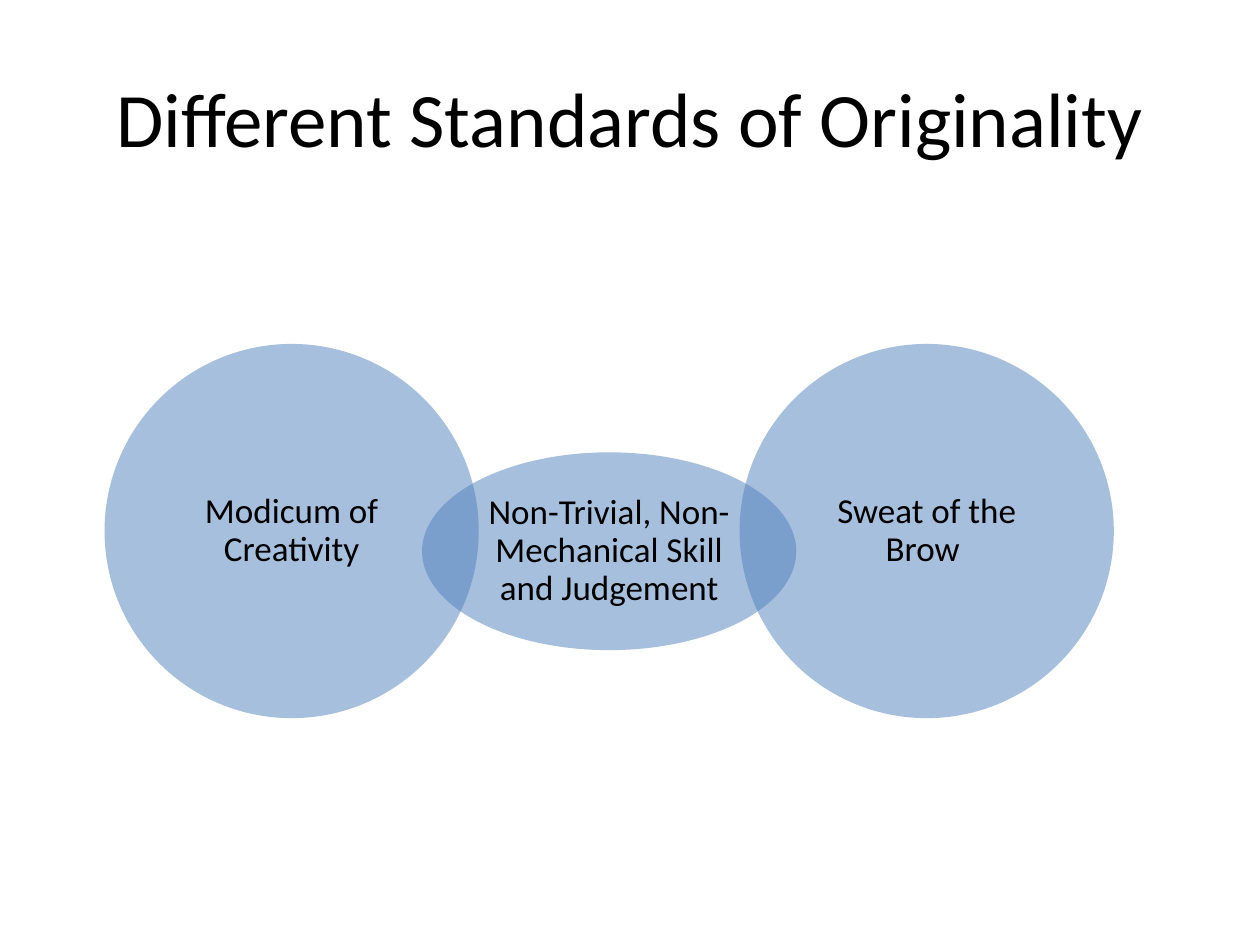
from lxml.etree import SubElement
from pptx import Presentation
from pptx.dml.color import RGBColor
from pptx.enum.shapes import MSO_SHAPE
from pptx.enum.text import MSO_ANCHOR, PP_ALIGN
from pptx.oxml.ns import qn
from pptx.util import Inches, Pt

BLUE = RGBColor(0x4F, 0x81, 0xBD)
BLACK = RGBColor(0, 0, 0)
FONT = "Calibri"

# Row of overlapping ellipses
DIAMETER = 2.97
FIRST_LEFT, STEP = 0.83, 2.52
STANDARDS = [  # label, ellipse top, ellipse height
    ("Modicum of Creativity", 2.73, DIAMETER),
    ("Non-Trivial, Non-Mechanical Skill and Judgement", 3.59, 1.57),
    ("Sweat of the Brow ", 2.73, DIAMETER),
]
# Share of an ellipse's size outside its inscribed rectangle, per side
INSCRIBED = (1 - 0.5 ** 0.5) / 2


def write_text(frame, text, size=20, line_spacing=None, space_after=None, inset=None):
    frame.word_wrap = True
    frame.vertical_anchor = MSO_ANCHOR.MIDDLE
    if inset is not None:
        frame.margin_left = frame.margin_right = Inches(inset)
        frame.margin_top = frame.margin_bottom = Inches(inset)
    paragraph = frame.paragraphs[0]
    paragraph.alignment = PP_ALIGN.CENTER
    paragraph.line_spacing = line_spacing
    paragraph.space_after = space_after
    run = paragraph.add_run()
    run.text = text
    run.font.name = FONT
    run.font.size = Pt(size)
    run.font.color.rgb = BLACK


class StandardsSlide:
    def __init__(self, deck):
        self.slide = deck.slides.add_slide(deck.slide_layouts[5])
        self.fill = BLUE
        self.opacity = 50

    def title(self, text, left, top, width, height):
        heading = self.slide.shapes.title
        heading.left, heading.top = Inches(left), Inches(top)
        heading.width, heading.height = Inches(width), Inches(height)
        write_text(heading.text_frame, text, size=44)

    def ellipse(self, left, top, width, height):
        oval = self.slide.shapes.add_shape(
            MSO_SHAPE.OVAL, Inches(left), Inches(top), Inches(width), Inches(height))
        oval.shadow.inherit = False
        oval.fill.solid()
        oval.fill.fore_color.rgb = self.fill
        oval.line.fill.background()
        color = oval.fill._xPr.find(qn("a:solidFill"))[0]
        SubElement(color, qn("a:alpha"), val=str(self.opacity * 1000))

    def label(self, text, left, top, width, height):
        box = self.slide.shapes.add_textbox(
            Inches(left), Inches(top), Inches(width), Inches(height))
        write_text(box.text_frame, text, line_spacing=0.9, space_after=Pt(7), inset=0.08)


def main():
    deck = Presentation()
    deck.slide_width, deck.slide_height = Inches(10), Inches(7.5)
    page = StandardsSlide(deck)

    # Title
    page.title("Different Standards of Originality", 0.5, 0.3, 9, 1.25)

    # Ellipses, each with a label in its inscribed rectangle
    for index, (standard, top, height) in enumerate(STANDARDS):
        left = FIRST_LEFT + index * STEP
        page.ellipse(left, top, DIAMETER, height)
        page.label(standard, left + DIAMETER * INSCRIBED, top + height * INSCRIBED,
                   DIAMETER * (1 - 2 * INSCRIBED), height * (1 - 2 * INSCRIBED))

    deck.save("out.pptx")


if __name__ == "__main__":
    main()
